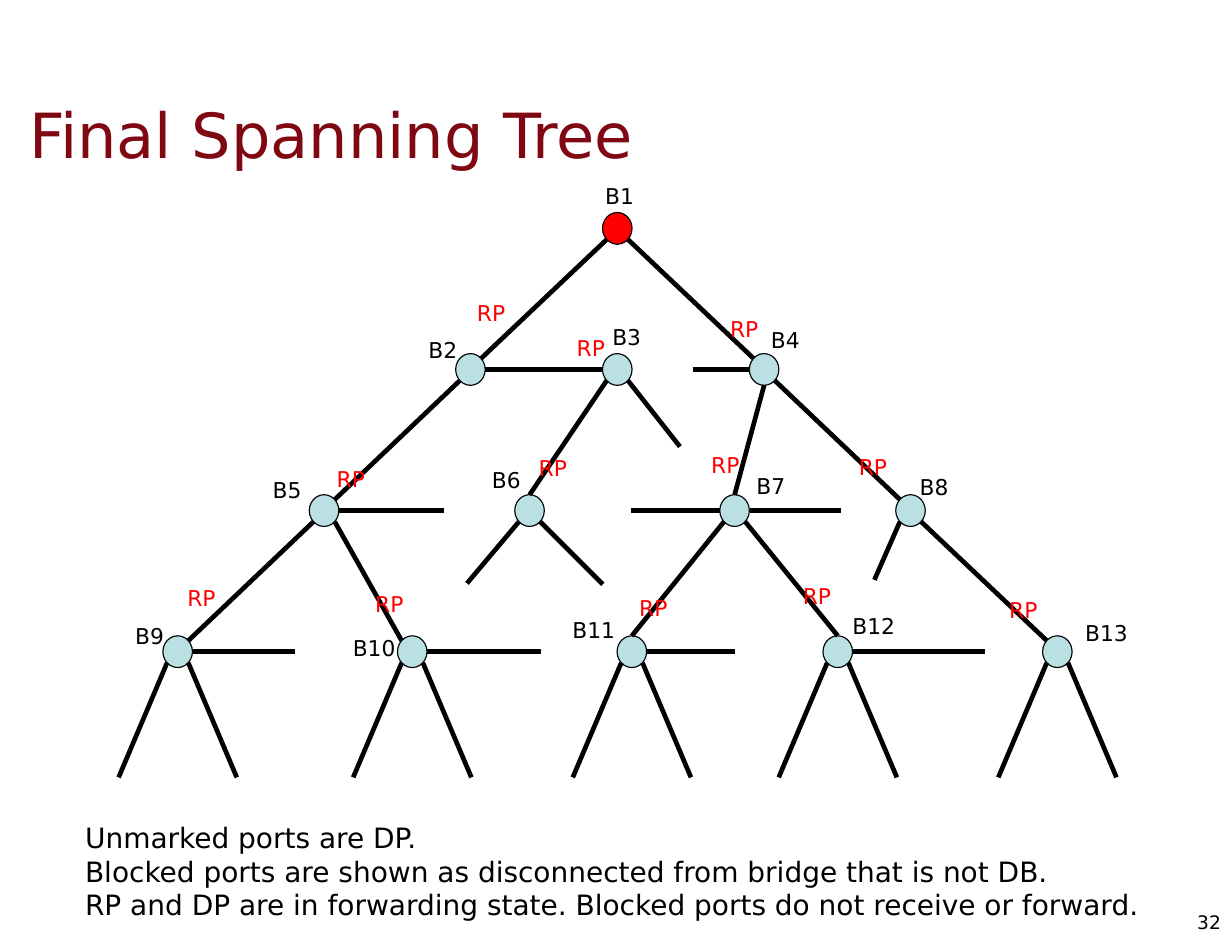
from dataclasses import dataclass
from typing import NamedTuple, Optional

from lxml.etree import SubElement
from pptx import Presentation
from pptx.dml.color import RGBColor
from pptx.enum.shapes import MSO_CONNECTOR, MSO_SHAPE
from pptx.enum.text import MSO_ANCHOR, PP_ALIGN
from pptx.oxml.ns import qn
from pptx.slide import Slide
from pptx.util import Cm, Pt

MAROON = RGBColor(0x7F, 0x08, 0x13)
BLACK = RGBColor(0, 0, 0)
RED = RGBColor(0xFF, 0, 0)
PALE_BLUE = RGBColor(0xBB, 0xE0, 0xE3)

FONT_NAME = "DejaVu Sans"
BRIDGE_WIDTH, BRIDGE_HEIGHT = 0.67, 0.72
ROOT_Y, LEVEL_GAP = 5.18, 3.2
PORT_OFFSETS = {
    "top": (0, -0.36), "bottom": (0, 0.36),
    "left": (-0.34, 0), "right": (0.34, 0),
    "top left": (-0.24, -0.25), "top right": (0.24, -0.25),
    "bottom left": (-0.24, 0.25), "bottom right": (0.24, 0.25),
}


class Box(NamedTuple):
    left: float
    top: float
    width: float
    height: float = 0.86


class Point(NamedTuple):
    x: float
    y: float


@dataclass
class Bridge:
    center_x: float
    level: int
    label: Box
    root_port: Optional[Box] = None

    def port(self, side: str) -> Point:
        dx, dy = PORT_OFFSETS[side]
        return Point(self.center_x + dx, ROOT_Y + self.level * LEVEL_GAP + dy)


class Link(NamedTuple):
    parent: str
    parent_port: str
    child: str
    child_port: str


class BlockedLink(NamedTuple):
    bridge: str
    port: str
    dx: float
    dy: float = 0


BRIDGES = {
    "B1": Bridge(14.0, 0, Box(13.44, 4.01, 1.19)),
    "B2": Bridge(10.67, 1, Box(8.28, 7.52, 2.34, 1.52), Box(9.37, 6.68, 2.34, 1.52)),
    "B3": Bridge(14.0, 1, Box(13.49, 7.21, 1.3), Box(12.8, 7.47, 1.17)),
    "B4": Bridge(17.33, 1, Box(17.12, 7.29, 1.27), Box(16.23, 7.04, 1.22)),
    "B5": Bridge(7.35, 2, Box(5.82, 10.69, 1.27), Box(7.29, 10.44, 1.24)),
    "B6": Bridge(12.01, 2, Box(10.87, 10.46, 1.19), Box(11.89, 10.19, 1.22)),
    "B7": Bridge(16.66, 2, Box(16.89, 10.59, 1.17), Box(15.88, 10.11, 1.14)),
    "B8": Bridge(20.65, 2, Box(20.57, 10.62, 1.19), Box(19.18, 10.16, 1.19)),
    "B9": Bridge(4.03, 3, Box(2.67, 14.0, 1.3), Box(3.84, 13.13, 1.3)),
    "B10": Bridge(9.35, 3, Box(7.72, 14.27, 1.5), Box(8.23, 13.28, 1.17)),
    "B11": Bridge(14.33, 3, Box(12.7, 13.87, 1.5), Box(14.2, 13.36, 1.19)),
    "B12": Bridge(19.0, 3, Box(19.05, 13.77, 1.5), Box(17.93, 13.08, 1.17)),
    "B13": Bridge(23.98, 3, Box(24.33, 13.94, 1.5), Box(22.56, 13.41, 1.22)),
}

LINKS = [
    Link("B1", "bottom left", "B2", "top right"),
    Link("B1", "bottom right", "B4", "top left"),
    Link("B2", "right", "B3", "left"),
    Link("B2", "bottom left", "B5", "top right"),
    Link("B3", "bottom left", "B6", "top"),
    Link("B4", "bottom", "B7", "top"),
    Link("B4", "bottom right", "B8", "top left"),
    Link("B5", "bottom left", "B9", "top right"),
    Link("B5", "bottom right", "B10", "top left"),
    Link("B7", "bottom left", "B11", "top"),
    Link("B7", "bottom right", "B12", "top"),
    Link("B8", "bottom right", "B13", "top left"),
]

BLOCKED_LINKS = [
    BlockedLink("B3", "bottom right", 1.18, 1.5),
    BlockedLink("B4", "left", -1.27),
    BlockedLink("B5", "right", 2.37),
    BlockedLink("B6", "bottom left", -1.18, 1.4),
    BlockedLink("B6", "bottom right", 1.42, 1.42),
    BlockedLink("B7", "left", -2.0),
    BlockedLink("B7", "right", 2.07),
    BlockedLink("B8", "bottom left", -0.58, 1.32),
    BlockedLink("B9", "right", 2.33),
    BlockedLink("B10", "right", 2.59),
    BlockedLink("B11", "right", 1.99),
    BlockedLink("B12", "right", 3.0),
] + [
    BlockedLink(name, f"bottom {side}", dx, 2.6)
    for name, bridge in BRIDGES.items() if bridge.level == 3
    for side, dx in (("left", -1.1), ("right", 1.1))
]

EXPLANATION = [
    "Unmarked ports are DP.",
    "Blocked ports are shown as disconnected from bridge that is not DB.",
    "RP and DP are in forwarding state. Blocked ports do not receive or forward.",
]


def add_text(slide: Slide, box: Box, lines: list[str], size: float, color: RGBColor,
             align: PP_ALIGN = PP_ALIGN.RIGHT, **frame_format) -> None:
    frame = slide.shapes.add_textbox(*map(Cm, box)).text_frame
    for attribute, value in {"word_wrap": True, **frame_format}.items():
        setattr(frame, attribute, value)
    frame.text = "\n".join(lines)
    for paragraph in frame.paragraphs:
        paragraph.alignment = align
        for attribute, value in {"name": FONT_NAME, "size": Pt(size)}.items():
            setattr(paragraph.font, attribute, value)
        paragraph.font.color.rgb = color


def add_bridge(slide: Slide, bridge: Bridge) -> None:
    center_y = ROOT_Y + bridge.level * LEVEL_GAP
    node = slide.shapes.add_shape(
        MSO_SHAPE.OVAL, Cm(bridge.center_x - BRIDGE_WIDTH / 2),
        Cm(center_y - BRIDGE_HEIGHT / 2), Cm(BRIDGE_WIDTH), Cm(BRIDGE_HEIGHT))
    node.shadow.inherit = False
    node.fill.solid()
    node.fill.fore_color.rgb = PALE_BLUE if bridge.root_port else RED
    node.line.color.rgb = BLACK
    node.line.width = Pt(0.75)


def add_link(slide: Slide, start: Point, end: Point) -> None:
    link = slide.shapes.add_connector(MSO_CONNECTOR.STRAIGHT, *map(Cm, (*start, *end)))
    link.line.color.rgb = BLACK
    link.line.width = Pt(3)
    SubElement(link._element.spPr, qn("a:effectLst"))


def main() -> None:
    presentation = Presentation()
    presentation.slide_width, presentation.slide_height = Cm(27.94), Cm(21.59)
    slide = presentation.slides.add_slide(presentation.slide_layouts[6])

    add_text(slide, Box(0.38, 1.7, 26.75, 2.64), ["Final Spanning Tree"], 40, MAROON,
             PP_ALIGN.LEFT, vertical_anchor=MSO_ANCHOR.MIDDLE, margin_left=Cm(0.28))
    add_text(slide, Box(26.75, 20.35, 1.19, 1.14), ["32"], 12, BLACK,
             vertical_anchor=MSO_ANCHOR.MIDDLE, margin_left=0)

    for bridge in BRIDGES.values():
        add_bridge(slide, bridge)
    for link in LINKS:
        add_link(slide, BRIDGES[link.parent].port(link.parent_port),
                 BRIDGES[link.child].port(link.child_port))
    for blocked in BLOCKED_LINKS:
        start = BRIDGES[blocked.bridge].port(blocked.port)
        add_link(slide, start, Point(start.x + blocked.dx, start.y + blocked.dy))

    for name, bridge in BRIDGES.items():
        add_text(slide, bridge.label, [name], 14, BLACK, margin_left=0)
        if bridge.root_port:
            add_text(slide, bridge.root_port, ["RP"], 14, RED, margin_left=0)

    add_text(slide, Box(1.68, 18.49, 25.17, 2.57), EXPLANATION, 18, BLACK, PP_ALIGN.LEFT)
    presentation.save("out.pptx")


if __name__ == "__main__":
    main()
